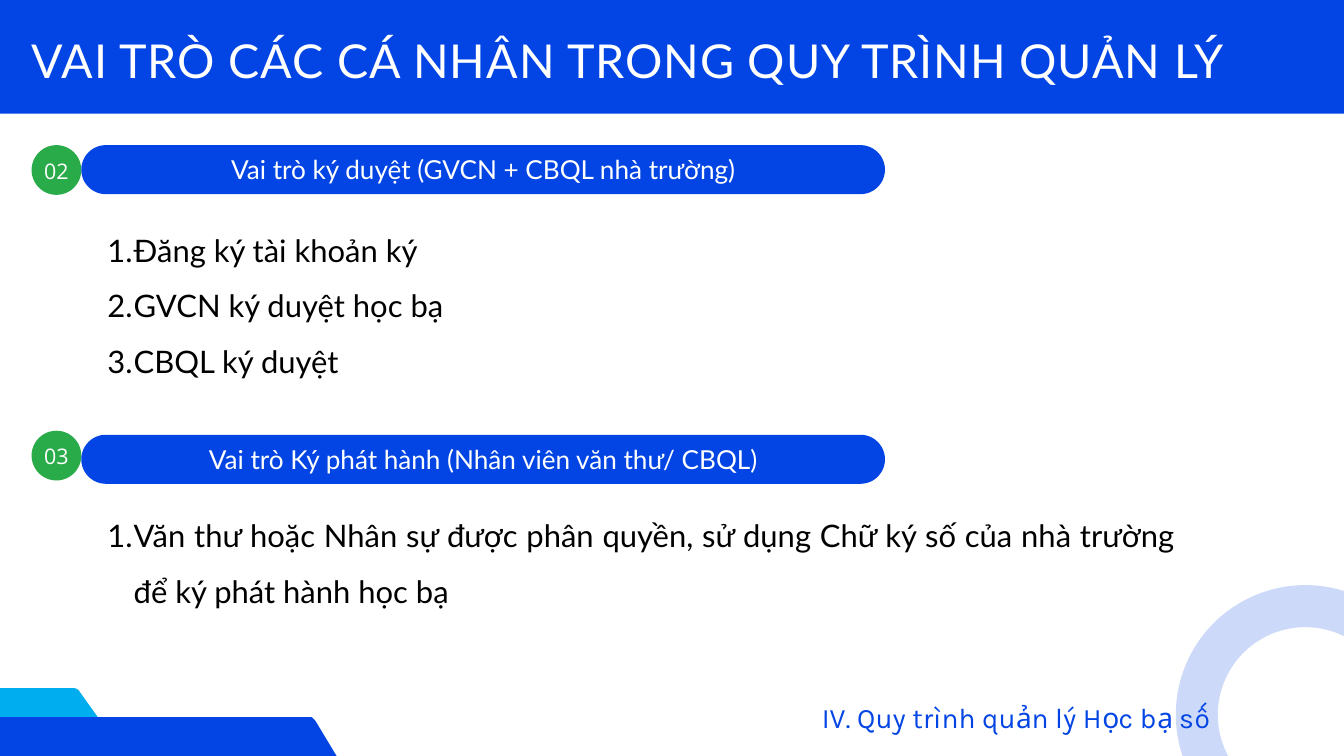
"""Build the slide on roles in the digital school record process."""
from lxml import etree
from pptx import Presentation
from pptx.dml.color import RGBColor
from pptx.enum.shapes import MSO_SHAPE
from pptx.enum.text import MSO_ANCHOR, MSO_AUTO_SIZE, PP_ALIGN
from pptx.oxml.ns import qn
from pptx.util import Pt

PX = 9144
BLUE = RGBColor(0x03, 0x45, 0xE4)
GREEN = RGBColor(0x2A, 0xAB, 0x4A)
CYAN = RGBColor(0x00, 0xAD, 0xEF)
WHITE = RGBColor(0xFF, 0xFF, 0xFF)
BLACK = RGBColor(0x00, 0x00, 0x00)
RECTANGLE, OVAL, PILL = MSO_SHAPE.RECTANGLE, MSO_SHAPE.OVAL, MSO_SHAPE.ROUNDED_RECTANGLE
CENTER, JUSTIFY = PP_ALIGN.CENTER, PP_ALIGN.JUSTIFY
MIDDLE, TOP = MSO_ANCHOR.MIDDLE, MSO_ANCHOR.TOP
GROW = MSO_AUTO_SIZE.SHAPE_TO_FIT_TEXT

TITLE = {"font": {"name": "Lato", "size": Pt(50)}, "color": WHITE,
         "para": {"line_spacing": Pt(70)}}
NUMBER = {"font": {"name": "Open Sans", "size": Pt(23)}, "color": WHITE,
          "para": {"alignment": CENTER, "line_spacing": Pt(32.2)}}
HEADING = {"font": {"name": "Lato", "size": Pt(28)}, "color": WHITE,
           "para": {"alignment": CENTER, "line_spacing": Pt(39.2)}}
STEP = {"font": {"name": "Lato", "size": Pt(33.2)}, "color": BLACK,
        "para": {"alignment": JUSTIFY, "line_spacing": Pt(59.5), "level": 1}}
FOOTER = {"font": {"name": "Karla", "size": Pt(30.2)}, "color": BLUE,
          "para": {"alignment": JUSTIFY, "line_spacing": Pt(45.4)}}

SECTIONS = [
    {"number": "02", "badge_top": 216, "pill_top": 216,
     "heading": "Vai trò ký duyệt (GVCN + CBQL nhà trường)",
     "steps_box": (121, 317, 1767, 240),
     "steps": ["Đăng ký tài khoản ký", "GVCN ký duyệt học bạ", "CBQL ký duyệt"]},
    {"number": "03", "badge_top": 641, "pill_top": 647,
     "heading": "Vai trò Ký phát hành (Nhân viên văn thư/ CBQL)",
     "steps_box": (121, 742, 1629, 158),
     "steps": ["Văn thư hoặc Nhân sự được phân quyền, sử dụng Chữ ký số của nhà trường "
               "để ký phát hành học bạ"]},
]


def scale(lengths):
    """Turn px lengths into EMU."""
    return [length * PX for length in lengths]


def set_all(target, values):
    """Set each named attribute on the target."""
    for name, value in values.items():
        setattr(target, name, value)


def write(frame, lines, style, layout):
    """Fill a text frame with one styled paragraph per line."""
    set_all(frame, layout)
    for index, line in enumerate(lines):
        para = frame.paragraphs[0] if index == 0 else frame.add_paragraph()
        set_all(para, style["para"])
        span = para.add_run()
        span.text = line
        set_all(span.font, style["font"])
        span.font.color.rgb = style["color"]


def add_text(page, box, lines, style):
    """Add a text box without insets and return its frame."""
    frame = page.shapes.add_textbox(*scale(box)).text_frame
    write(frame, lines, style, {
        "word_wrap": True, "auto_size": GROW, "vertical_anchor": TOP,
        "margin_left": 0, "margin_right": 0, "margin_top": 0, "margin_bottom": 0})
    return frame


def paint(shape, color):
    """Give a shape a flat fill with no outline or shadow."""
    shape.shadow.inherit = False
    shape.fill.solid()
    shape.fill.fore_color.rgb = color
    shape.line.fill.background()


def add_flat(page, kind, box, color):
    """Add a flat preset shape."""
    shape = page.shapes.add_shape(kind, *scale(box))
    paint(shape, color)
    return shape


def add_label(page, kind, box, color, text, style, lift):
    """Add a flat shape whose centred text sits slightly high."""
    shape = add_flat(page, kind, box, color)
    if kind == PILL:
        shape.adjustments[0] = 0.5
    write(shape.text_frame, [text], style, {
        "word_wrap": False, "vertical_anchor": MIDDLE, "margin_left": 0,
        "margin_right": 0, "margin_top": 0, "margin_bottom": lift * PX})


def number_steps(frame):
    """Number the paragraphs with a hanging indent."""
    for para in frame.paragraphs:
        props = para._p.get_or_add_pPr()
        props.set("marL", str(78 * PX))
        props.set("indent", str(-39 * PX))
        etree.SubElement(props, qn("a:buAutoNum"), type="arabicPeriod")


def add_section(page, section):
    """Add a numbered heading with its steps."""
    add_label(page, OVAL, (47, section["badge_top"], 74, 74), GREEN,
              section["number"], NUMBER, 4)
    add_label(page, PILL, (121, section["pill_top"], 1196, 73), BLUE,
              section["heading"], HEADING, 9)
    number_steps(add_text(page, section["steps_box"], section["steps"], STEP))


def toward(start, end, distance):
    """Return the point at a distance from start on the way to end."""
    length = ((end[0] - start[0]) ** 2 + (end[1] - start[1]) ** 2) ** 0.5
    return [a + (b - a) * distance / length for a, b in zip(start, end)]


def round_corners(corners, cut):
    """Replace each corner by points along a quadratic curve."""
    points = []
    for index, corner in enumerate(corners):
        first = toward(corner, corners[index - 1], cut)
        last = toward(corner, corners[(index + 1) % len(corners)], cut)
        for step in range(5):
            t = step / 4
            points.append([round((1 - t) ** 2 * a + 2 * t * (1 - t) * b + t * t * c)
                           for a, b, c in zip(first, corner, last)])
    return points


def add_hexagon(page, center, half_height, half_top, half_tip, cut, color):
    """Add a flat hexagon with rounded corners."""
    x, y = center
    corners = [(x - half_tip, y), (x - half_top, y - half_height),
               (x + half_top, y - half_height), (x + half_tip, y),
               (x + half_top, y + half_height), (x - half_top, y + half_height)]
    points = round_corners(corners, cut)
    builder = page.shapes.build_freeform(*points[0], scale=PX)
    builder.add_line_segments(points[1:], close=True)
    paint(builder.convert_to_shape(), color)


def add_ring(page, box):
    """Add a thick translucent ring."""
    ring = page.shapes.add_shape(OVAL, *scale(box))
    ring.shadow.inherit = False
    ring.fill.background()
    ring.line.width = Pt(45)
    ring.line.color.rgb = BLUE
    color = ring.line._ln.find(".//" + qn("a:srgbClr"))
    etree.SubElement(color, qn("a:alpha"), val="20000")


def main():
    """Build and save the slide."""
    deck = Presentation()
    set_all(deck, {"slide_width": 2000 * PX, "slide_height": 1125 * PX})
    page = deck.slides.add_slide(deck.slide_layouts[6])
    add_flat(page, RECTANGLE, (0, 0, 2000, 169), BLUE)
    title = add_text(page, (47, 34, 1909, 93),
                     ["VAI TRÒ CÁC CÁ NHÂN TRONG QUY TRÌNH QUẢN LÝ"], TITLE)
    title.paragraphs[0].runs[0].font._element.set("spc", "100")
    add_text(page, (1223, 1029, 734, 59), ["IV. Quy trình quản lý Học bạ số"], FOOTER)
    add_ring(page, (1781, 902, 323, 323))
    add_hexagon(page, (-44, 1123), 99, 159, 229, 7, CYAN)
    add_hexagon(page, (158, 1223), 156, 308, 402, 6, BLUE)
    for section in SECTIONS:
        add_section(page, section)
    deck.save("out.pptx")


if __name__ == "__main__":
    main()
